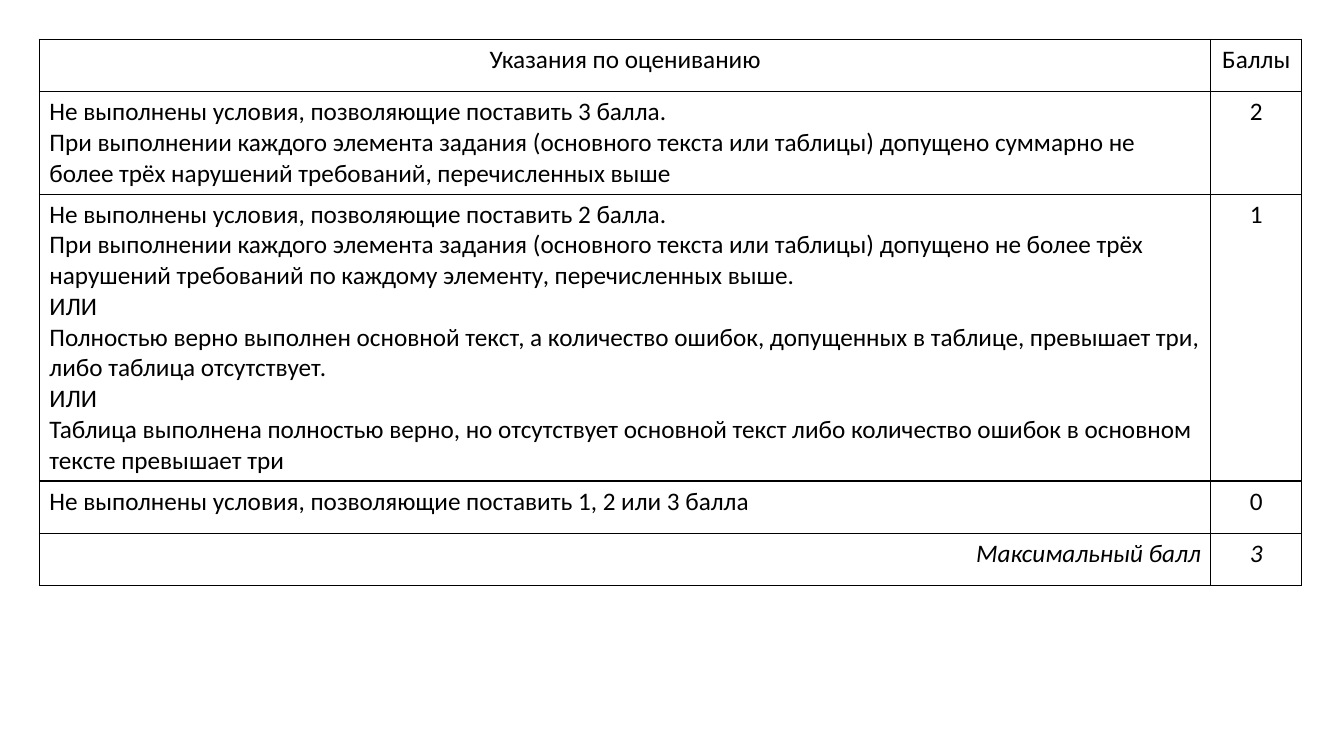
from dataclasses import dataclass

from lxml import etree
from pptx import Presentation
from pptx import util as u
from pptx.dml import color
from pptx.enum import text
from pptx.oxml import ns

PX = 9144  # EMU in one px, at 100 px to the inch
COLORS = {"ink": "000000"}
FONT = "Calibri"
SIZE = 18
ALIGN = text.PP_ALIGN
WIDTHS = (1162, 90)
ROW = 52
EDGE = 39
HEIGHT = 536


@dataclass(frozen=True)
class Rule:
    lines: tuple[str, ...]
    score: str
    align: ALIGN = ALIGN.LEFT
    italic: bool = False


RULES = (
    Rule(("Указания по оцениванию",), "Баллы", ALIGN.CENTER),
    Rule((
        "Не выполнены условия, позволяющие поставить 3 балла.",
        "При выполнении каждого элемента задания (основного текста или таблицы) "
        "допущено суммарно не более трёх нарушений требований, перечисленных выше",
    ), "2"),
    Rule((
        "Не выполнены условия, позволяющие поставить 2 балла.",
        "При выполнении каждого элемента задания (основного текста или таблицы) "
        "допущено не более трёх нарушений требований по каждому элементу, "
        "перечисленных выше.",
        "ИЛИ",
        "Полностью верно выполнен основной текст, а количество ошибок, "
        "допущенных в таблице, превышает три, либо таблица отсутствует.",
        "ИЛИ",
        "Таблица выполнена полностью верно, но отсутствует основной текст "
        "либо количество ошибок в основном тексте превышает три",
    ), "1"),
    Rule(("Не выполнены условия, позволяющие поставить 1, 2 или 3 балла",), "0"),
    Rule(("Максимальный балл",), "3", ALIGN.RIGHT, True),
)


def px(size: int) -> u.Emu:
    return u.Emu(size * PX)


def frame_cell(cell) -> None:
    """Clear the cell's fill and rule a 1 pt line on all four sides."""
    cell.fill.background()
    props = cell._tc.get_or_add_tcPr()
    for spot, side in enumerate(("lnL", "lnR", "lnT", "lnB")):
        line = etree.Element(ns.qn(f"a:{side}"), w=str(u.Pt(1)))
        fill = etree.SubElement(line, ns.qn("a:solidFill"))
        etree.SubElement(fill, ns.qn("a:srgbClr"), val=COLORS["ink"])
        props.insert(spot, line)


def fill_cell(cell, lines: tuple[str, ...], align: ALIGN, italic: bool) -> None:
    frame_cell(cell)
    cell.text_frame.text = "\n".join(lines)
    for para in cell.text_frame.paragraphs:
        para.alignment = align
        font = para.font
        font.name, font.size = FONT, u.Pt(SIZE)
        font.bold, font.italic = False, italic
        font.color.rgb = color.RGBColor.from_string(COLORS["ink"])


def add_rules(slide) -> None:
    frame = slide.shapes.add_table(
        len(RULES), len(WIDTHS), px(EDGE), px(EDGE), px(sum(WIDTHS)), px(HEIGHT))
    table = frame.table
    table.first_row = table.horz_banding = False
    for col, width in zip(table.columns, WIDTHS):
        col.width = px(width)
    for index, rule in enumerate(RULES):
        table.rows[index].height = px(ROW)
        fill_cell(table.cell(index, 0), rule.lines, rule.align, rule.italic)
        fill_cell(table.cell(index, 1), (rule.score,), ALIGN.CENTER, rule.italic)
    frame.height = px(HEIGHT)


def main() -> None:
    deck = Presentation()
    deck.slide_width, deck.slide_height = px(1333), px(750)
    add_rules(deck.slides.add_slide(deck.slide_layouts[6]))
    deck.save("out.pptx")


if __name__ == "__main__":
    main()
